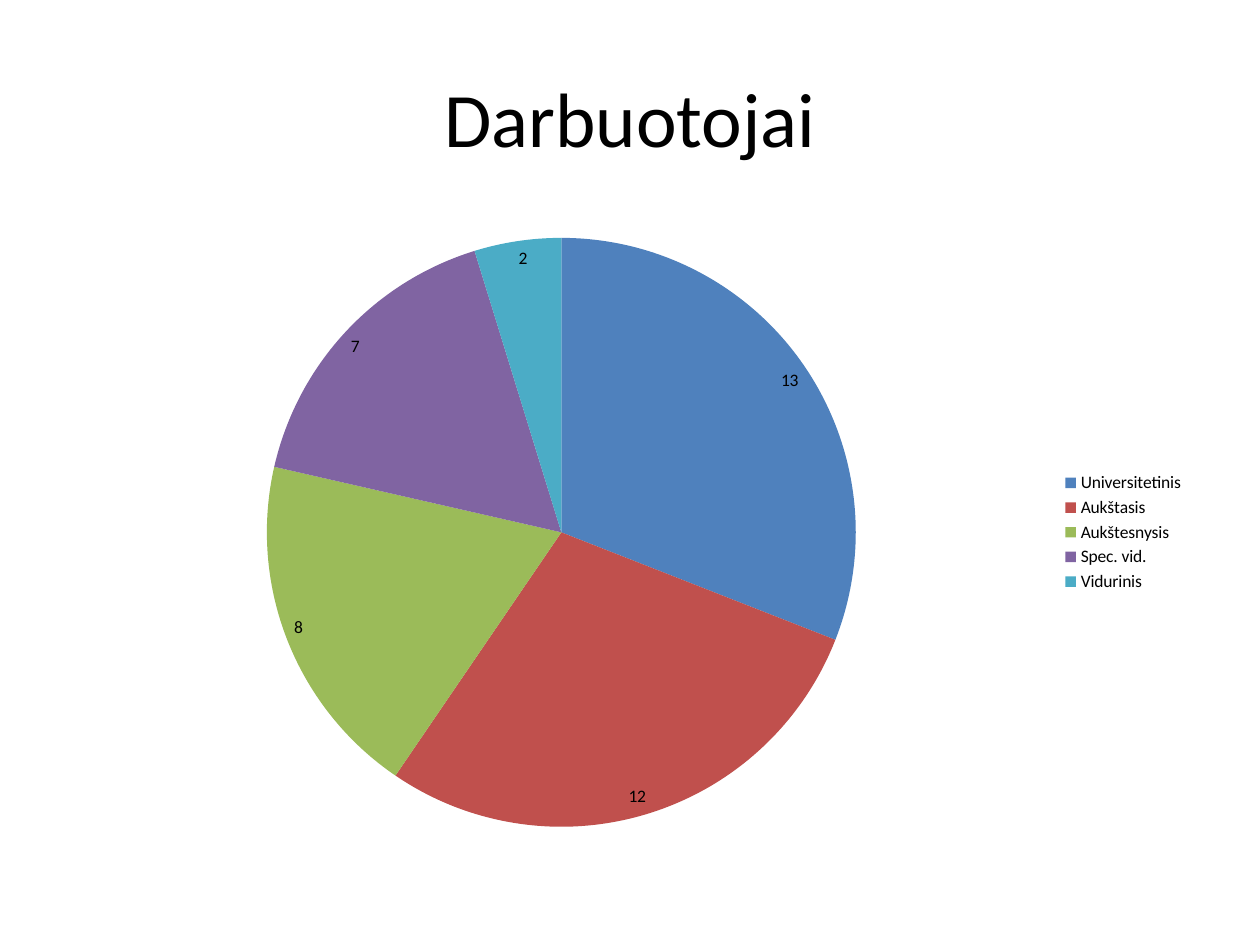
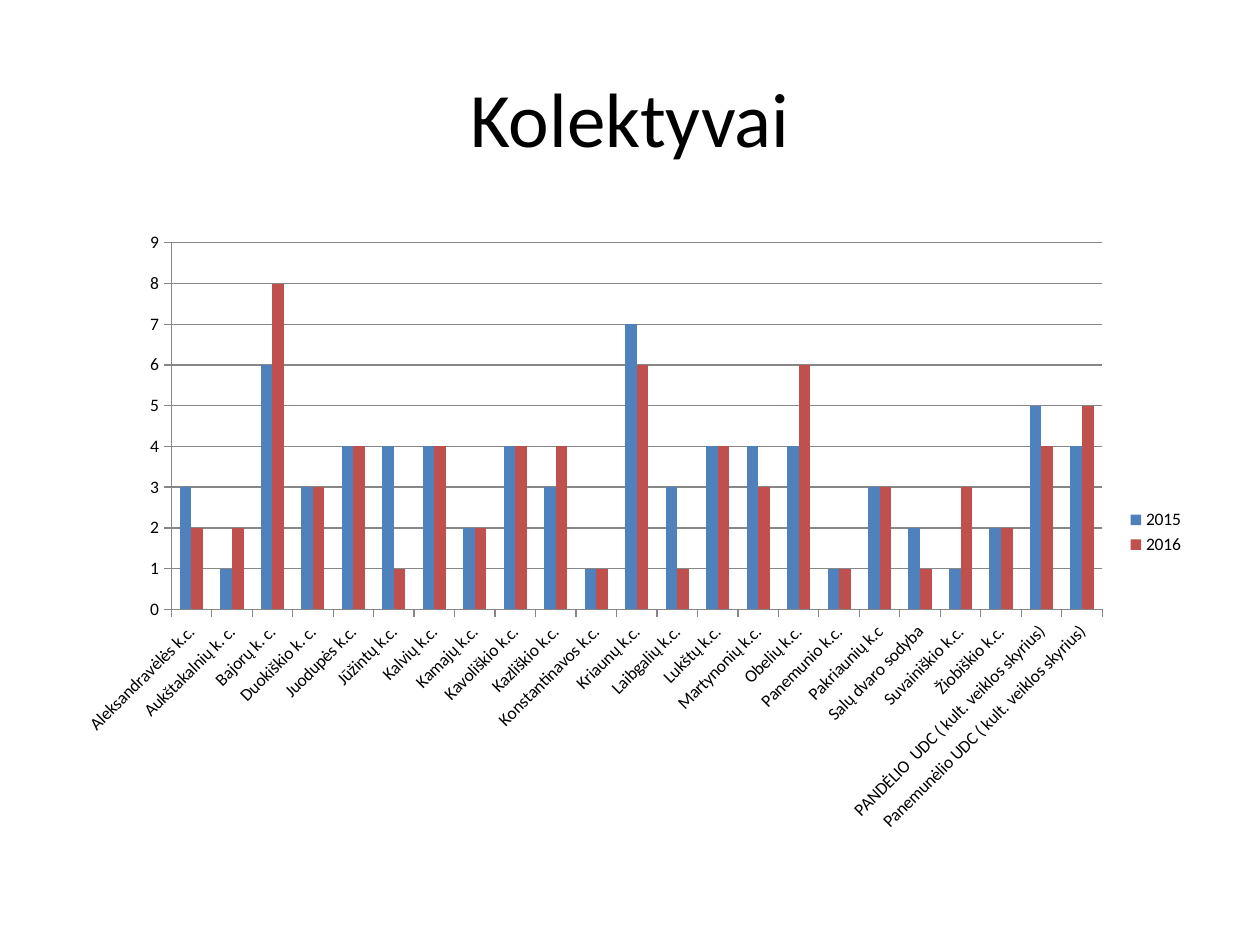
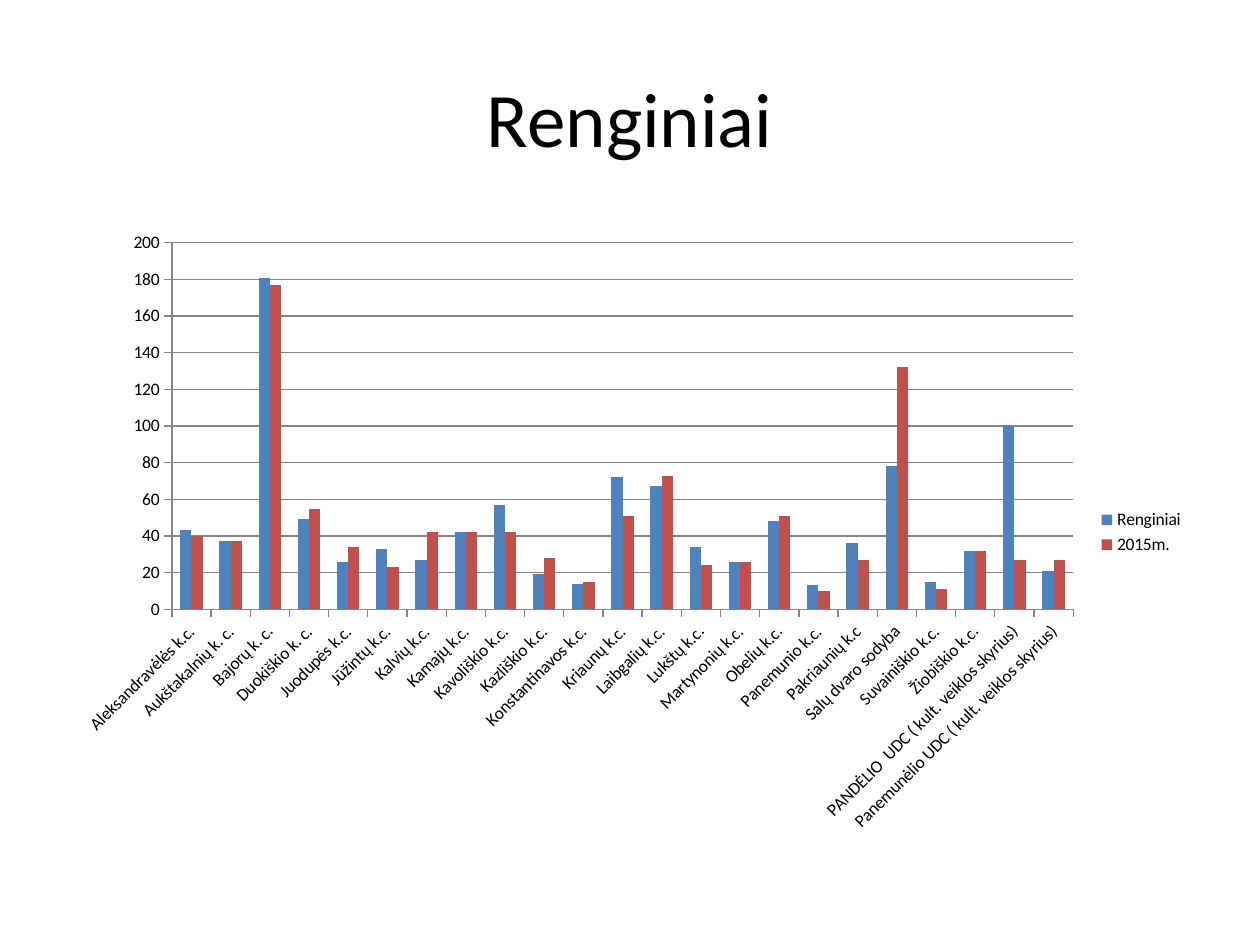
"""Builds three slides on culture centres: staff, ensembles and events."""
from dataclasses import dataclass

import pptx
import pptx.chart.data
import pptx.dml.color
import pptx.enum.chart
import pptx.enum.text
import pptx.util

Pt = pptx.util.Pt
RGB = pptx.dml.color.RGBColor.from_string
Kind = pptx.enum.chart.XL_CHART_TYPE

CENTRES = [
    "Aleksandravėlės k.c.", "Aukštakalnių k. c.", "Bajorų k. c.", "Duokiškio k. c.",
    "Juodupės k.c.", "Jūžintų k.c.", "Kalvių k.c.", "Kamajų k.c.", "Kavoliškio k.c.",
    "Kazliškio k.c.", "Konstantinavos k.c.", "Kriaunų k.c.", "Laibgalių k.c.",
    "Lukštų k.c.", "Martynonių k.c.", "Obelių k.c.", "Panemunio k.c.", "Pakriaunių k.c",
    "Salų dvaro sodyba", "Suvainiškio k.c.", "Žiobiškio k.c.",
    "PANDĖLIO  UDC ( kult. veiklos skyrius)", "Panemunėlio UDC ( kult. veiklos skyrius)",
]
EDUCATION = ["Universitetinis", "Aukštasis", "Aukštesnysis", "Spec. vid.", "Vidurinis"]

SLIDES = [
    {"title": "Darbuotojai", "kind": Kind.PIE, "categories": EDUCATION,
     "series": {"Series 1": [13, 12, 8, 7, 2]}},
    {"title": "Kolektyvai", "kind": Kind.COLUMN_CLUSTERED, "categories": CENTRES,
     "top": 9, "step": 1,
     "series": {
         "2015": [3, 1, 6, 3, 4, 4, 4, 2, 4, 3, 1, 7, 3, 4, 4, 4, 1, 3, 2, 1, 2, 5, 4],
         "2016": [2, 2, 8, 3, 4, 1, 4, 2, 4, 4, 1, 6, 1, 4, 3, 6, 1, 3, 1, 3, 2, 4, 5]}},
    {"title": "Renginiai", "kind": Kind.COLUMN_CLUSTERED, "categories": CENTRES,
     "top": 200, "step": 20,
     "series": {
         "Renginiai": [43, 37, 181, 49, 26, 33, 27, 42, 57, 19, 14, 72, 67, 34, 26, 48,
                       13, 36, 78, 15, 32, 100, 21],
         "2015m.": [40, 37, 177, 55, 34, 23, 42, 42, 42, 28, 15, 51, 73, 24, 26, 51,
                    10, 27, 132, 11, 32, 27, 27]}},
]


@dataclass(frozen=True)
class Theme:
    font: str = "Calibri"
    ink: str = "000000"
    paper: str = "FFFFFF"
    rule: str = "868686"
    accents: tuple = ("4F81BD", "C0504D", "9BBB59", "8064A2", "4BACC6")
    title_size: float = 44
    chart_size: float = 10


THEME = Theme()
WIDTH, HEIGHT, MARGIN = 720, 540, 36
CONTENT_WIDTH = WIDTH - 2 * MARGIN
TITLE_BOX = (MARGIN, 21.6, CONTENT_WIDTH, 90)
CHART_BOX = (MARGIN, 126, CONTENT_WIDTH, 356.4)


def style_font(font, size):
    font.name = THEME.font
    font.size = Pt(size)
    font.color.rgb = RGB(THEME.ink)


def paint(part, colour):
    part.format.fill.solid()
    part.format.fill.fore_color.rgb = RGB(colour)


def rule_line(line):
    line.color.rgb = RGB(THEME.rule)
    line.width = Pt(0.75)


def set_title(slide, wording):
    heading = slide.shapes.title
    heading.left, heading.top, heading.width, heading.height = map(Pt, TITLE_BOX)
    frame = heading.text_frame
    frame.text = wording
    frame.vertical_anchor = pptx.enum.text.MSO_ANCHOR.MIDDLE
    paragraph = frame.paragraphs[0]
    paragraph.alignment = pptx.enum.text.PP_ALIGN.CENTER
    style_font(paragraph.font, THEME.title_size)


def style_pie(plot):
    plot.vary_by_categories = True
    for index, colour in enumerate(THEME.accents):
        paint(plot.series[0].points[index], colour)
    plot.has_data_labels = True
    plot.data_labels.show_value = True
    plot.data_labels.show_percentage = False
    plot.data_labels.position = pptx.enum.chart.XL_LABEL_POSITION.INSIDE_END


def style_columns(chart, plot, top, step):
    plot.vary_by_categories = False
    plot.gap_width = 150
    plot.overlap = 0
    for series, colour in zip(plot.series, THEME.accents):
        paint(series, colour)
    for axis in (chart.category_axis, chart.value_axis):
        axis.major_tick_mark = pptx.enum.chart.XL_TICK_MARK.OUTSIDE
        axis.minor_tick_mark = pptx.enum.chart.XL_TICK_MARK.NONE
        rule_line(axis.format.line)
    values = chart.value_axis
    values.minimum_scale, values.maximum_scale, values.major_unit = 0, top, step
    values.has_major_gridlines = True
    rule_line(values.major_gridlines.format.line)


def add_chart(slide, content):
    data = pptx.chart.data.CategoryChartData()
    data.categories = content["categories"]
    for label, values in content["series"].items():
        data.add_series(label, values)
    chart = slide.shapes.add_chart(content["kind"], *map(Pt, CHART_BOX), data).chart
    style_font(chart.font, THEME.chart_size)
    chart.has_title = False
    chart.has_legend = True
    chart.legend.position = pptx.enum.chart.XL_LEGEND_POSITION.RIGHT
    chart.legend.include_in_layout = False
    if content["kind"] == Kind.PIE:
        style_pie(chart.plots[0])
    else:
        style_columns(chart, chart.plots[0], content["top"], content["step"])


def main():
    deck = pptx.Presentation()
    deck.slide_width, deck.slide_height = Pt(WIDTH), Pt(HEIGHT)
    background = deck.slide_master.background.fill
    background.solid()
    background.fore_color.rgb = RGB(THEME.paper)
    title_only = deck.slide_layouts.get_by_name("Title Only")
    for content in SLIDES:
        slide = deck.slides.add_slide(title_only)
        set_title(slide, content["title"])
        add_chart(slide, content)
    deck.save("out.pptx")


if __name__ == "__main__":
    main()
